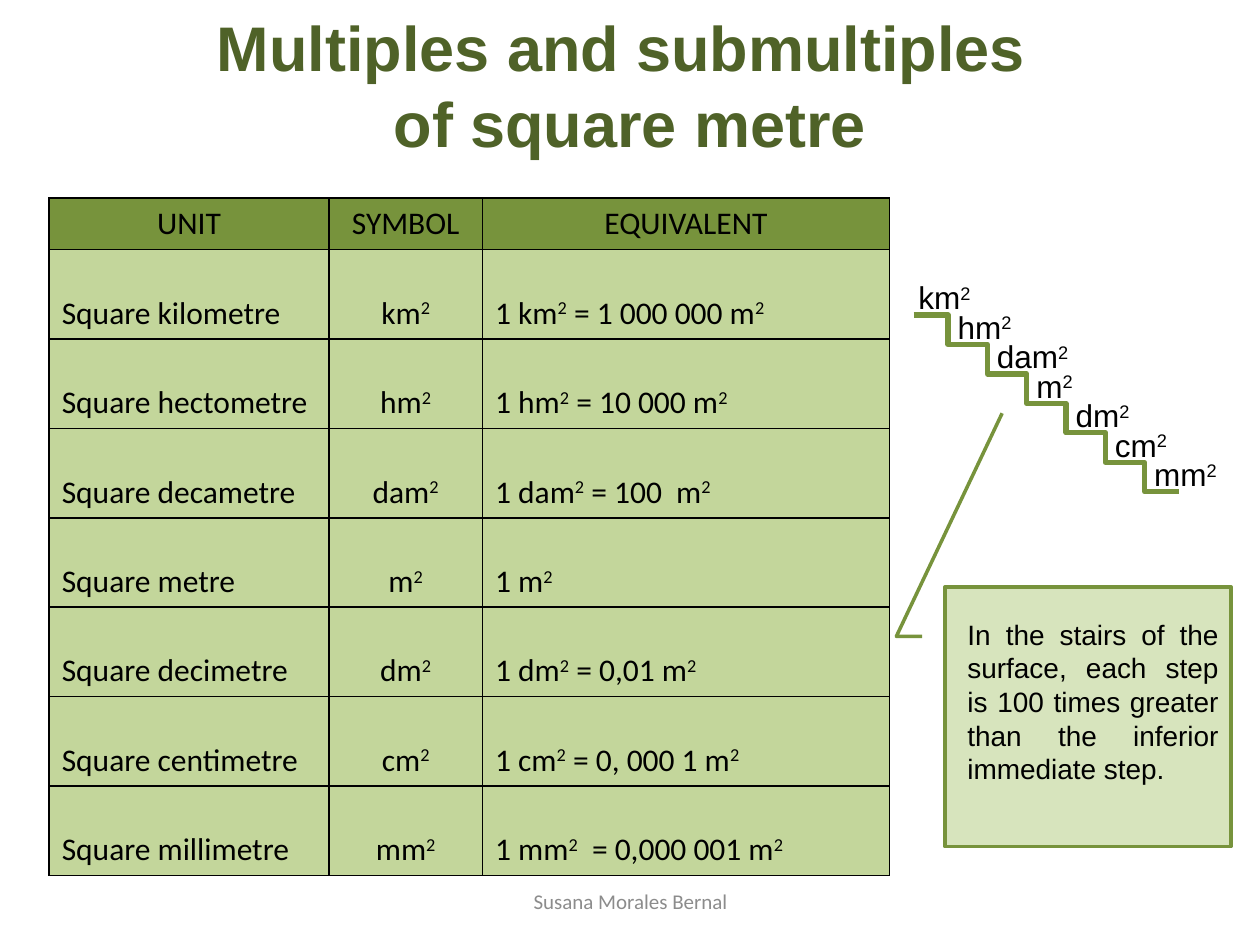
"""Build a slide on the multiples and submultiples of the square metre."""
from dataclasses import dataclass

from lxml import etree
from pptx import Presentation
from pptx.dml.color import RGBColor
from pptx.enum.shapes import MSO_CONNECTOR, MSO_SHAPE
from pptx.enum.text import MSO_ANCHOR, PP_ALIGN
from pptx.oxml.ns import qn
from pptx.util import Inches, Pt

LEFT, CENTER, JUSTIFY = PP_ALIGN.LEFT, PP_ALIGN.CENTER, PP_ALIGN.JUSTIFY
TOP, MIDDLE, BOTTOM = MSO_ANCHOR.TOP, MSO_ANCHOR.MIDDLE, MSO_ANCHOR.BOTTOM
ELBOW = MSO_CONNECTOR.ELBOW
CALLOUT = MSO_SHAPE.LINE_CALLOUT_2

BLACK, GREEN, DARK_GREEN = "000000", "77933C", "4F6228"
LIGHT_GREEN, PALE_GREEN, GREY = "C3D69B", "D7E4BD", "8C8C8C"

COLUMN_WIDTHS = (2.22, 1.22, 3.23)
HEADER_HEIGHT, ROW_HEIGHT = 0.41, 0.71
STEP_X, STEP_Y = 1.56 / 5, 1.17 / 5


@dataclass(frozen=True)
class Style:
    size: float
    font: str = "Arial"
    color: str = BLACK
    bold: bool = False
    align: PP_ALIGN = LEFT
    anchor: MSO_ANCHOR = TOP


@dataclass(frozen=True)
class Label:
    lines: tuple[str, ...]
    left: float
    top: float
    width: float
    height: float
    style: Style


@dataclass(frozen=True)
class Unit:
    name: str
    symbol: str
    equivalent: str
    label_width: float


UNITS = (
    Unit("Square kilometre", "km²", "1 km² = 1 000 000 m²", 0.69),
    Unit("Square hectometre", "hm²", "1 hm² = 10 000 m²", 0.71),
    Unit("Square decametre", "dam²", "1 dam² = 100  m²", 0.94),
    Unit("Square metre", "m²", "1 m²", 0.55),
    Unit("Square decimetre", "dm²", "1 dm² = 0,01 m²", 0.71),
    Unit("Square centimetre", "cm²", "1 cm² = 0, 000 1 m²", 0.69),
    Unit("Square millimetre", "mm²", "1 mm²  = 0,000 001 m²", 0.78),
)

STAIR_STYLE = Style(18)
LABELS = (
    Label(("Multiples and submultiples ", "of square metre"), 0, 0.02, 10, 1.31,
          Style(36, color=DARK_GREEN, bold=True, align=CENTER)),
    Label(("In the stairs of the surface, each step is 100 times greater "
           "than the inferior immediate step.",), 7.58, 4.85, 2.19, 1.45,
          Style(16, align=JUSTIFY)),
    Label(("Susana Morales Bernal",), 3.42, 6.95, 3.17, 0.4,
          Style(12, "Calibri", GREY, align=CENTER, anchor=MIDDLE)),
)


def rgb(color: str) -> RGBColor:
    """Turn a hex string into a colour."""
    return RGBColor.from_string(color)


def add_span(para, text: str, style: Style, raised: bool = False) -> None:
    """Add one formatted run, raised when it is an exponent."""
    span = para.add_run()
    span.text = text
    formats = {"size": Pt(style.size), "name": style.font, "bold": style.bold}
    for name, value in formats.items():
        setattr(span.font, name, value)
    span.font.color.rgb = rgb(style.color)
    if raised:
        span._r.get_or_add_rPr().set("baseline", "30000")


def write_para(para, text: str, style: Style) -> None:
    """Write a paragraph, setting each ² as a raised 2."""
    para.alignment = style.align
    for index, part in enumerate(text.split("²")):
        if index:
            add_span(para, "2", style, raised=True)
        if part:
            add_span(para, part, style)


def draw_label(page, label: Label) -> None:
    """Draw a wrapped text box with one paragraph per line."""
    places = (label.left, label.top, label.width, label.height)
    frame = page.shapes.add_textbox(*map(Inches, places)).text_frame
    frame.word_wrap = True
    frame.vertical_anchor = label.style.anchor
    for index, line in enumerate(label.lines):
        para = frame.add_paragraph() if index else frame.paragraphs[0]
        write_para(para, line, label.style)


def fill_cell(cell, text: str, fill: str, style: Style) -> None:
    """Give a cell its black borders, fill and text."""
    properties = cell._tc.get_or_add_tcPr()
    for side in ("a:lnL", "a:lnR", "a:lnT", "a:lnB"):
        border = etree.SubElement(properties, qn(side), w=str(Pt(1)))
        solid = etree.SubElement(border, qn("a:solidFill"))
        etree.SubElement(solid, qn("a:srgbClr"), val=BLACK)
    cell.fill.solid()
    cell.fill.fore_color.rgb = rgb(fill)
    cell.vertical_anchor = style.anchor
    write_para(cell.text_frame.paragraphs[0], text, style)


def draw_table(page) -> None:
    """Draw the table of units, symbols and equivalents."""
    heights = (HEADER_HEIGHT,) + (ROW_HEIGHT,) * len(UNITS)
    places = (0.39, 1.57, sum(COLUMN_WIDTHS), sum(heights))
    table = page.shapes.add_table(
        len(heights), len(COLUMN_WIDTHS), *map(Inches, places)).table
    for column, width in zip(table.columns, COLUMN_WIDTHS):
        column.width = Inches(width)
    for row, height in zip(table.rows, heights):
        row.height = Inches(height)
    texts = [("UNIT", "SYMBOL", "EQUIVALENT")]
    texts += [(unit.name, unit.symbol, unit.equivalent) for unit in UNITS]
    for row_index, row_texts in enumerate(texts):
        for column_index, text in enumerate(row_texts):
            centred = row_index == 0 or column_index == 1
            style = Style(18, "Calibri", align=CENTER if centred else LEFT, anchor=BOTTOM)
            fill = LIGHT_GREEN if row_index else GREEN
            fill_cell(table.cell(row_index, column_index), text, fill, style)


def draw_stairs(page) -> None:
    """Draw the descending steps, with a unit symbol on each."""
    for index in range(len(UNITS) - 1):
        left, top = 7.25 + index * STEP_X, 2.5 + index * STEP_Y
        ends = (left, top, left + 0.55, top + STEP_Y)
        step = page.shapes.add_connector(ELBOW, *map(Inches, ends))
        step.line.color.rgb = rgb(GREEN)
        step.line.width = Pt(3)
        etree.SubElement(step._element.spPr, qn("a:effectLst"))
    for index, unit in enumerate(UNITS):
        draw_label(page, Label((unit.symbol,), 7.19 + index * STEP_X,
                               2.16 + index * STEP_Y, unit.label_width, 0.4, STAIR_STYLE))


def draw_callout(page) -> None:
    """Draw the callout that points at the stairs."""
    callout = page.shapes.add_shape(CALLOUT, *map(Inches, (7.5, 4.66, 2.27, 2.06)))
    for index, value in enumerate((0.19, -0.08, 0.19, -0.17, -0.67, 0.2)):
        callout.adjustments[index] = value
    callout.shadow.inherit = False
    callout.fill.solid()
    callout.fill.fore_color.rgb = rgb(PALE_GREEN)
    callout.line.color.rgb = rgb(GREEN)
    callout.line.width = Pt(2)


def main() -> None:
    """Build the deck and save it."""
    deck = Presentation()
    deck.slide_width, deck.slide_height = Inches(10), Inches(7.5)
    page = deck.slides.add_slide(deck.slide_layouts[6])
    draw_table(page)
    draw_stairs(page)
    draw_callout(page)
    for label in LABELS:
        draw_label(page, label)
    deck.save("out.pptx")


if __name__ == "__main__":
    main()
